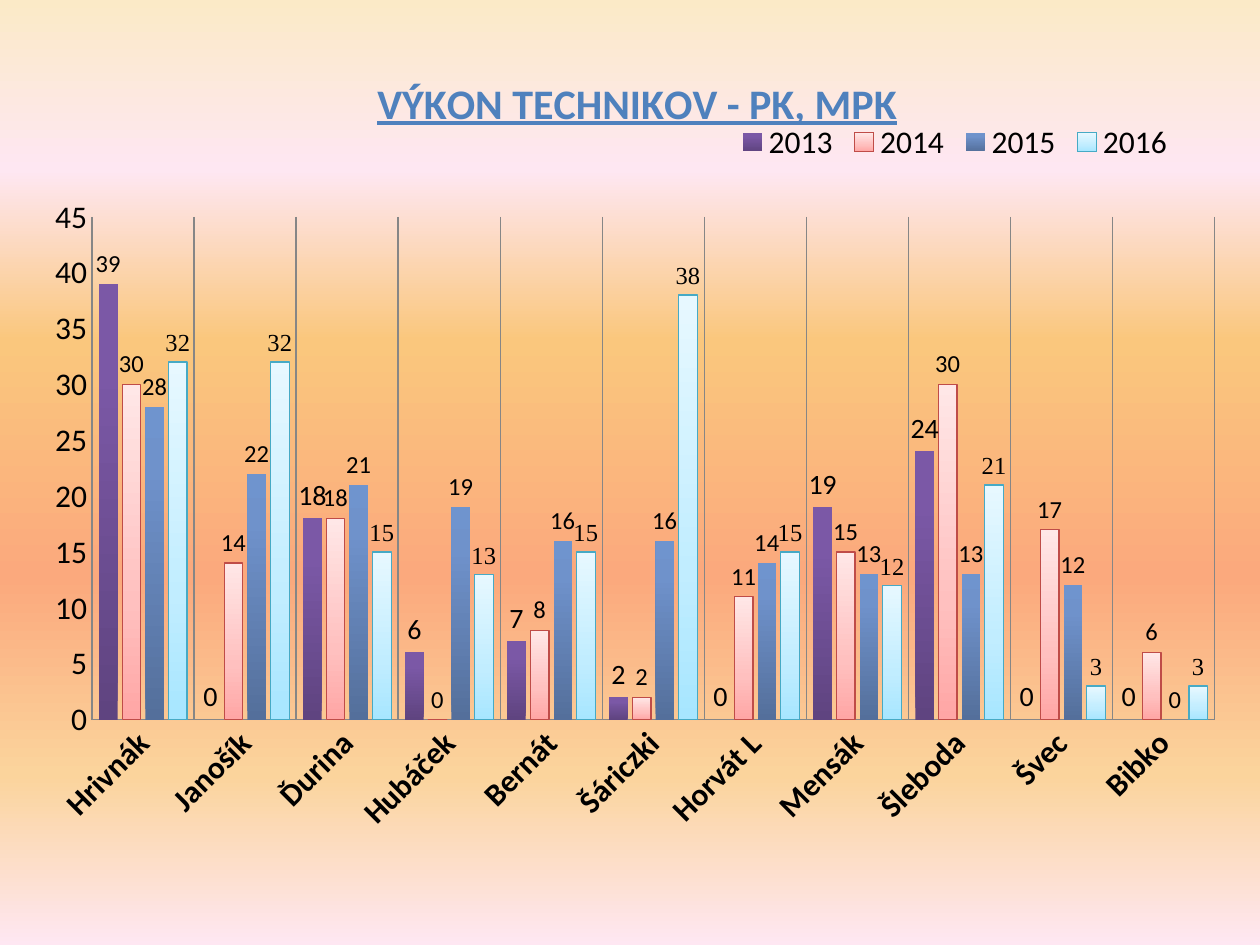
from lxml.etree import SubElement
from pptx import Presentation
from pptx.chart.data import CategoryChartData
from pptx.dml.color import RGBColor
from pptx.enum.chart import XL_CHART_TYPE, XL_LABEL_POSITION, XL_LEGEND_POSITION, XL_TICK_MARK
from pptx.oxml.ns import qn
from pptx.util import Cm, Pt

COLORS = {"text": "000000", "title": "4F81BD", "grid": "868686",
          "2014 line": "BF4C48", "2016 line": "46AAC5"}
BACKGROUND = [(0, "FBEAC7"), (18, "FEE7F2"), (36, "FAC77D"),
              (61, "FBA97D"), (82, "FBD49C"), (100, "FEE7F2")]
BAR_GRADIENTS = {
    "2013": [(0, "5F4480"), (80, "7B58A6"), (100, "7C57A8")],
    "2014": [(0, "FFA6A5"), (35, "FFC0BF"), (100, "FFE7E7")],
    "2015": [(0, "546F9B"), (80, "6F92CB"), (100, "6F94CE")],
    "2016": [(0, "A7E6FF"), (35, "C1EDFF"), (100, "E7F8FF")],
}
TECHNICIANS = ["Hrivnák", "Janošík", "Ďurina", "Hubáček", "Bernát", "Šáriczki",
               "Horvát L", "Mensák", "Šleboda", "Švec", "Bibko"]
RESULTS = {
    "2013": [39, 0, 18, 6, 7, 2, 0, 19, 24, 0, 0],
    "2014": [30, 14, 18, 0, 8, 2, 11, 15, 30, 17, 6],
    "2015": [28, 22, 21, 19, 16, 16, 14, 13, 13, 12, 0],
    "2016": [32, 32, 15, 13, 15, 38, 15, 12, 21, 3, 3],
}


def set_font(font, size, color="text", name="Calibri", bold=False):
    font.size = Pt(size)
    font.name = name
    font.bold = bold
    font.color.rgb = RGBColor.from_string(COLORS[color])


def set_line(line, color, width=0.75):
    line.color.rgb = RGBColor.from_string(COLORS[color])
    line.width = Pt(width)


def paint_gradient(fill, owner, stops, angle):
    """Give fill, which lies inside the element owner, a linear gradient."""
    fill.gradient()
    gradient = owner.find(f".//{qn('a:gradFill')}")
    stop_list = gradient.find(qn("a:gsLst"))
    for old_stop in list(stop_list):
        stop_list.remove(old_stop)
    for percent, color in stops:
        stop = SubElement(stop_list, qn("a:gs"), pos=str(percent * 1000))
        SubElement(stop, qn("a:srgbClr"), val=color)
    gradient.find(qn("a:lin")).set("ang", str(angle * 60000))


def place(part, index, **fractions):
    """Lay out a chart part by fractions of the chart's size."""
    for old_layout in part.findall(qn("c:layout")):
        part.remove(old_layout)
    layout = SubElement(part, qn("c:layout"))
    part.insert(index, layout)
    manual = SubElement(layout, qn("c:manualLayout"))
    if index == 0:
        SubElement(manual, qn("c:layoutTarget"), val="inner")
    for mode in ("xMode", "yMode"):
        SubElement(manual, qn(f"c:{mode}"), val="edge")
    for key, value in fractions.items():
        SubElement(manual, qn(f"c:{key}"), val=str(value))


def add_title(chart):
    chart.has_title = True
    title = chart.chart_title
    heading = title.text_frame.paragraphs[0]
    heading.text = "VÝKON TECHNIKOV - PK, MPK"
    set_font(heading.font, 24, "title", bold=True)
    heading.font.underline = True
    place(title._element, 1, x=0.28, y=0.04)


def add_legend(chart):
    chart.has_legend = True
    legend = chart.legend
    legend.position = XL_LEGEND_POSITION.BOTTOM
    legend.include_in_layout = False
    set_font(legend.font, 18)
    place(legend._element, 1, x=0.58, y=0.1, w=0.37, h=0.05)


def style_axes(chart):
    names, values = chart.category_axis, chart.value_axis
    for axis in (names, values):
        axis.major_tick_mark = axis.minor_tick_mark = XL_TICK_MARK.NONE
    set_font(names.tick_labels.font, 18, bold=True)
    names._element.find(f".//{qn('a:bodyPr')}").set("rot", "-2700000")
    names.has_major_gridlines = True
    set_line(names.major_gridlines.format.line, "grid")
    set_line(names.format.line, "grid")
    set_font(values.tick_labels.font, 18)
    values.has_major_gridlines = False
    values.format.line.fill.background()
    values.minimum_scale, values.maximum_scale, values.major_unit = 0, 45, 5


def style_year(series):
    year = series.name
    paint_gradient(series.format.fill, series._element, BAR_GRADIENTS[year], 270)
    if f"{year} line" in COLORS:
        set_line(series.format.line, f"{year} line")
    else:
        series.format.line.fill.background()
    labels = series.data_labels
    labels.show_value = True
    labels.position = XL_LABEL_POSITION.OUTSIDE_END
    set_font(labels.font, 16 if year == "2013" else 14,
             name="Times New Roman" if year == "2016" else "Calibri")


def add_results_chart(slide):
    data = CategoryChartData()
    data.categories = TECHNICIANS
    for year, counts in RESULTS.items():
        data.add_series(year, counts)
    chart = slide.shapes.add_chart(XL_CHART_TYPE.COLUMN_CLUSTERED, Cm(0.64), Cm(0.64),
                                   Cm(24.33), Cm(17.78), data).chart
    set_font(chart.font, 18)
    add_title(chart)
    add_legend(chart)
    style_axes(chart)
    plot = chart.plots[0]
    plot.gap_width, plot.overlap, plot.vary_by_categories = 75, -25, False
    for series in plot.series:
        style_year(series)
    best_label = plot.series[0].points[0].data_label
    set_font(best_label.font, 14)
    best_label.position = XL_LABEL_POSITION.OUTSIDE_END
    place(chart._chartSpace.chart.plotArea, 0, x=0.05, y=0.21, w=0.93, h=0.57)


def main():
    deck = Presentation()
    deck.slide_width, deck.slide_height = Cm(25.4), Cm(19.05)
    slide = deck.slides.add_slide(deck.slide_layouts[6])
    paint_gradient(slide.background.fill, slide._element, BACKGROUND, 90)
    add_results_chart(slide)
    deck.save("out.pptx")


if __name__ == "__main__":
    main()
